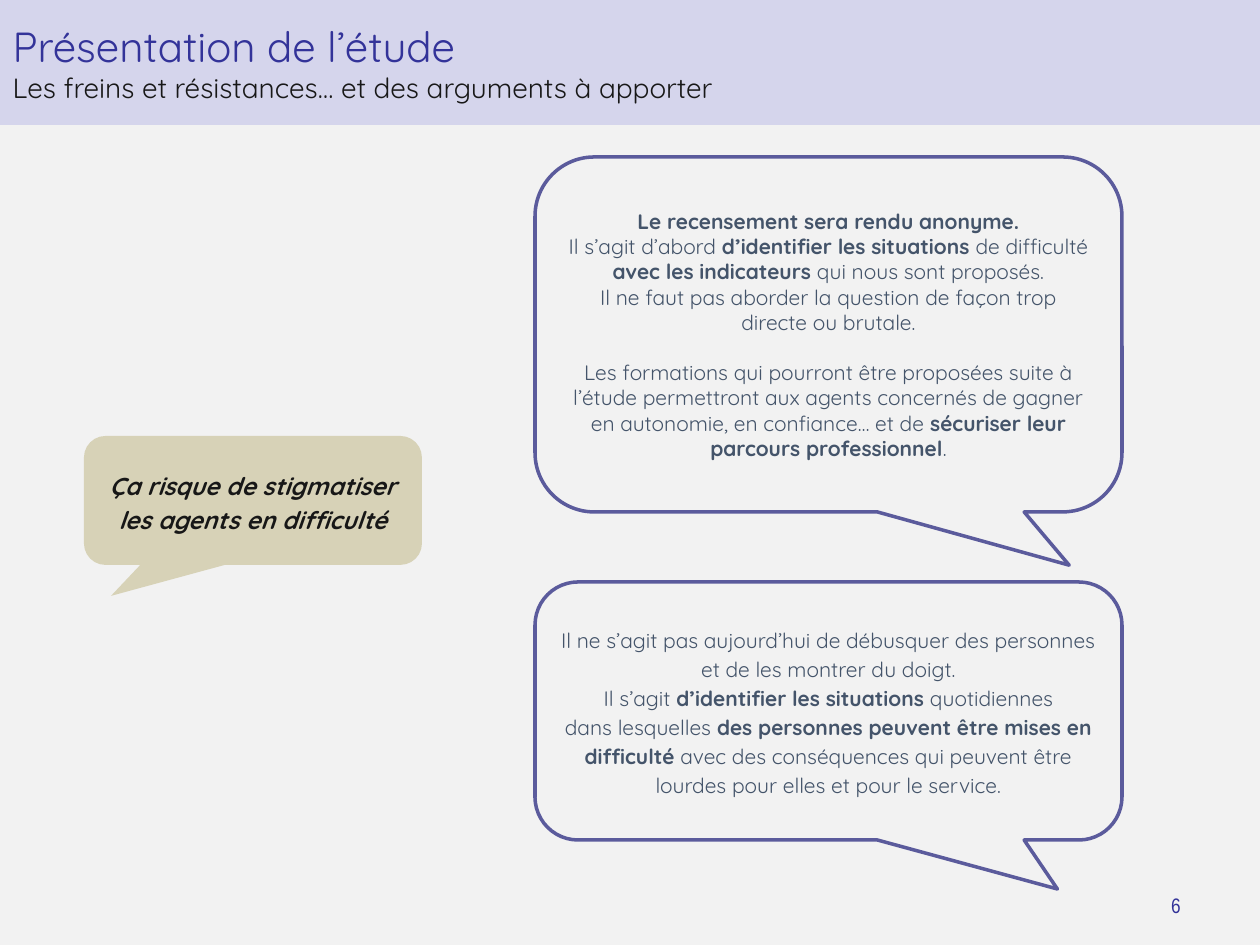
from dataclasses import dataclass

from lxml.etree import SubElement
from pptx import Presentation
from pptx.dml.color import RGBColor
from pptx.enum.shapes import MSO_SHAPE
from pptx.enum.text import MSO_ANCHOR, MSO_AUTO_SIZE, PP_ALIGN
from pptx.oxml.ns import qn
from pptx.util import Emu, Pt

EMU_PER_PX = 914400 / 126


@dataclass(frozen=True)
class Theme:
    paper: str = "F2F2F2"
    banner: str = "B0B0E5"
    banner_alpha: int = 43000
    indigo: str = "333399"
    subtitle: str = "181818"
    outline: str = "5B5B9C"
    sand: str = "D7D2B7"
    objection: str = "171717"
    slate: str = "44546A"
    face: str = "Quicksand"
    number_face: str = "Arial Narrow"
    title_size: int = 24
    subtitle_size: int = 16
    objection_size: int = 14
    body_size: int = 12


THEME = Theme()


@dataclass(frozen=True)
class Line:
    text: str
    size: int
    color: str
    face: str = THEME.face
    italic: bool = False
    align: PP_ALIGN = PP_ALIGN.CENTER
    spacing: float = 1.0
    before: float = 0


@dataclass(frozen=True)
class Bubble:
    frame: tuple[int, int, int, int]
    tail: tuple[float, float]
    fill: str
    lines: list[Line]
    outline: str | None = None


def px(value: int) -> Emu:
    return Emu(round(value * EMU_PER_PX))


def apply(target, formats: dict) -> None:
    for name, value in formats.items():
        setattr(target, name, value)


def place(box, frame: tuple[int, int, int, int]) -> None:
    apply(box, dict(zip(("left", "top", "width", "height"), map(px, frame))))


def paint(fill, color: str) -> None:
    fill.solid()
    fill.fore_color.rgb = RGBColor.from_string(color)


def write(box, lines: list[Line]) -> None:
    frame = box.text_frame
    apply(frame, {
        "word_wrap": True,
        "auto_size": MSO_AUTO_SIZE.NONE,
        "vertical_anchor": MSO_ANCHOR.MIDDLE,
    })
    for index, line in enumerate(lines):
        para = frame.add_paragraph() if index else frame.paragraphs[0]
        apply(para, {
            "alignment": line.align,
            "line_spacing": line.spacing,
            "space_before": Pt(line.before),
        })
        for part, text in enumerate(line.text.split("**")):
            if not text:
                continue
            span = para.add_run()
            span.text = text
            apply(span.font, {
                "name": line.face,
                "size": Pt(line.size),
                "bold": part % 2 == 1,
                "italic": line.italic,
            })
            span.font.color.rgb = RGBColor.from_string(line.color)


def draw_bubble(page, bubble: Bubble) -> None:
    box = page.shapes.add_shape(
        MSO_SHAPE.ROUNDED_RECTANGULAR_CALLOUT, *map(px, bubble.frame))
    box.shadow.inherit = False
    for index, value in enumerate((*bubble.tail, 0.167)):
        box.adjustments[index] = value
    paint(box.fill, bubble.fill)
    if bubble.outline:
        paint(box.line.fill, bubble.outline)
        box.line.width = Pt(2)
    else:
        box.line.fill.background()
    write(box, bubble.lines)


def draw_title(page) -> None:
    title = page.shapes.title
    place(title, (0, 0, 1260, 125))
    paint(title.fill, THEME.banner)
    color = title.fill._xPr.find(qn("a:solidFill"))[0]
    SubElement(color, qn("a:alpha"), val=str(THEME.banner_alpha))
    write(title, [
        Line("Présentation de l’étude", THEME.title_size, THEME.indigo,
             align=PP_ALIGN.LEFT),
        Line("Les freins et résistances… et des arguments à apporter",
             THEME.subtitle_size, THEME.subtitle, align=PP_ALIGN.LEFT),
    ])


def answer(text: str, spacing: float = 1.0, before: float = 0) -> Line:
    return Line(text, THEME.body_size, THEME.slate, spacing=spacing, before=before)


BUBBLES = [
    Bubble((84, 436, 338, 129), (-0.42, 0.74), THEME.sand, [
        Line("**Ça risque de stigmatiser les agents en difficulté**",
             THEME.objection_size, THEME.objection, italic=True, spacing=1.15),
    ]),
    Bubble((535, 157, 587, 355), (0.41, 0.65), THEME.paper, [
        answer("**Le recensement sera rendu anonyme.**"),
        answer("Il s’agit d’abord **d’identifier les situations** de difficulté"),
        answer("**avec les indicateurs** qui nous sont proposés."),
        answer("Il ne faut pas aborder la question de façon trop directe ou brutale."),
        answer("Les formations qui pourront être proposées suite à l’étude permettront "
               "aux agents concernés de gagner en autonomie, en confiance… et de "
               "**sécuriser leur parcours professionnel**.", before=14.4),
    ], THEME.outline),
    Bubble((535, 582, 587, 258), (0.39, 0.69), THEME.paper, [
        answer("Il ne s’agit pas aujourd’hui de débusquer des personnes "
               "et de les montrer du doigt.", 1.15),
        answer("Il s’agit **d’identifier les situations** quotidiennes", 1.15),
        answer("dans lesquelles **des personnes peuvent être mises en difficulté **"
               "avec des conséquences qui peuvent être lourdes pour elles "
               "et pour le service.", 1.15),
    ], THEME.outline),
]


def main() -> None:
    deck = Presentation()
    apply(deck, {"slide_width": px(1260), "slide_height": px(945)})
    page = deck.slides.add_slide(deck.slide_layouts[5])
    paint(page.background.fill, THEME.paper)
    draw_title(page)
    for bubble in BUBBLES:
        draw_bubble(page, bubble)
    number = page.shapes.add_textbox(*map(px, (1122, 876, 108, 59)))
    write(number, [Line("6", THEME.body_size, THEME.indigo, THEME.number_face)])
    deck.save("out.pptx")


if __name__ == "__main__":
    main()
